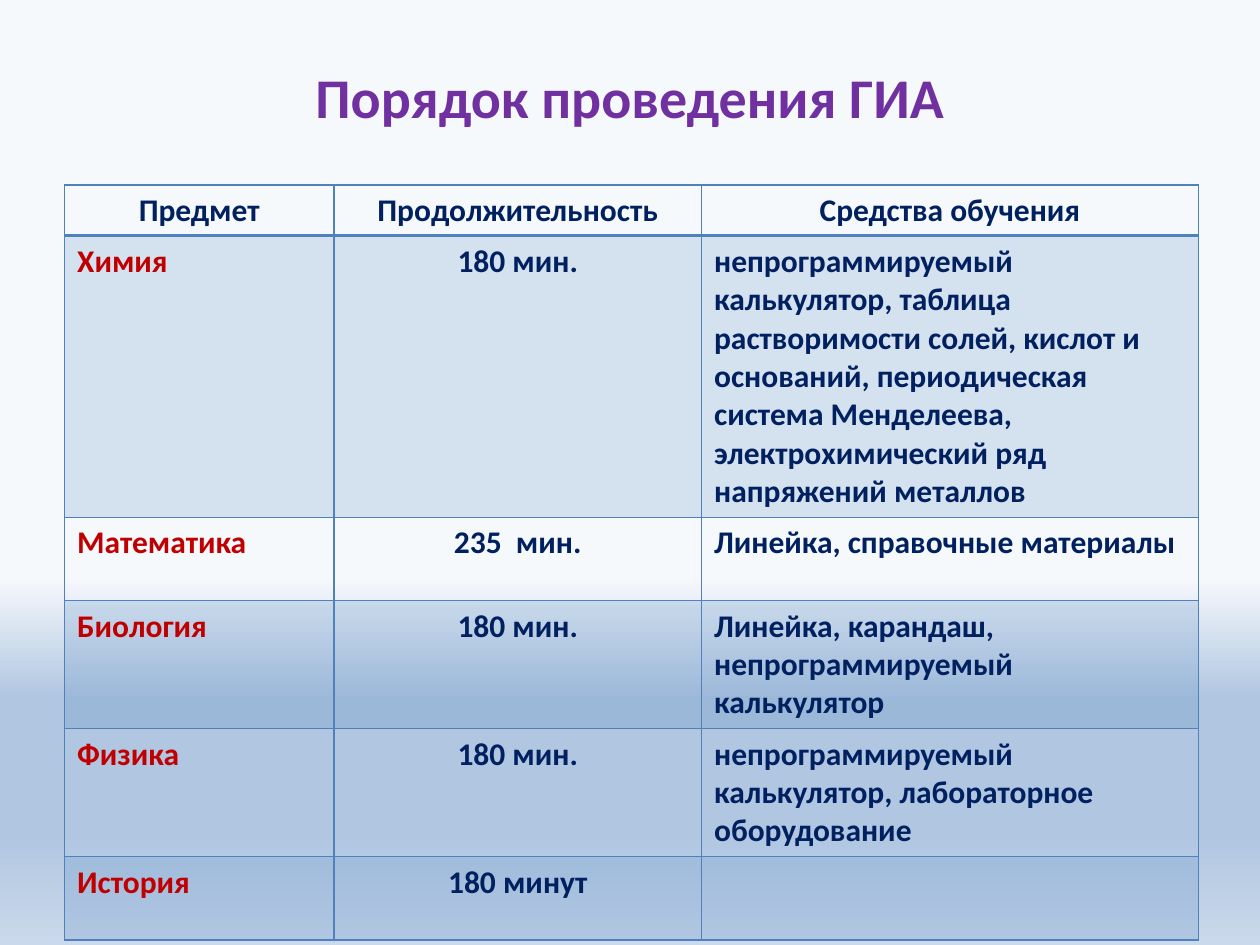
from lxml import etree
from pptx import Presentation
from pptx import util as u
from pptx.dml.color import RGBColor
from pptx.enum import text
from pptx.oxml import parse_xml
from pptx.oxml.ns import nsdecls, qn

TITLE = "Порядок проведения ГИА"
HEADER = ("Предмет", "Продолжительность", "Средства обучения")
EXAMS = [
    ("Химия", "180 мин.",
     "непрограммируемый калькулятор, таблица растворимости солей, кислот и "
     "оснований, периодическая система Менделеева, электрохимический ряд "
     "напряжений металлов"),
    ("Математика", "235  мин.", "Линейка, справочные материалы"),
    ("Биология", "180 мин.", "Линейка, карандаш, непрограммируемый калькулятор"),
    ("Физика", "180 мин.",
     "непрограммируемый калькулятор, лабораторное оборудование"),
    ("История", "180 минут", ""),
]
COL_WIDTHS = (154, 210, 284)
ROW_HEIGHTS = (29, 160.5, 47.5, 73, 73, 47.5)
TITLE_BOX = (36, 21.6, 648, 67)
TABLE_POS = (36.9, 105.6)
THEME = {
    "font": "Calibri", "title_size": 32, "cell_size": 18,
    "title": "7030A0", "text": "002060", "subject": "C00000",
    "accent": "4F81BD", "band_alpha": 20, "line": 1, "header_line": 2,
    "background": [(61, "F6F9FC"), (74, "B0C6E1"), (88, "B0C6E1"), (100, "CAD9EB")],
}


def style(p, size, color, align):
    p.alignment = align
    for f in [p.font] + [r.font for r in p.runs]:
        f.name, f.size, f.bold = THEME["font"], u.Pt(size), True
        f.color.rgb = RGBColor.from_string(color)


def paint_background(s):
    fill = s.background.fill
    fill.gradient()
    grad = s.background._cSld.find(".//" + qn("a:gradFill"))
    for child in list(grad):
        grad.remove(child)
    stops = "".join(
        f'<a:gs pos="{pos * 1000}"><a:srgbClr val="{color}"/></a:gs>'
        for pos, color in THEME["background"])
    grad.append(parse_xml(f'<a:gsLst {nsdecls("a")}>{stops}</a:gsLst>'))
    grad.append(parse_xml(f'<a:lin {nsdecls("a")} ang="5400000" scaled="0"/>'))


def set_borders(cell, top, bottom):
    widths = {"lnL": THEME["line"], "lnR": THEME["line"], "lnT": top, "lnB": bottom}
    tc_pr = cell._tc.get_or_add_tcPr()
    for i, (side, width) in enumerate(widths.items()):
        tc_pr.insert(i, parse_xml(
            f'<a:{side} {nsdecls("a")} w="{u.Pt(width)}"><a:solidFill>'
            f'<a:srgbClr val="{THEME["accent"]}"/></a:solidFill></a:{side}>'))


def set_band(cell, banded):
    if not banded:
        cell.fill.background()
        return
    cell.fill.solid()
    cell.fill.fore_color.rgb = RGBColor.from_string(THEME["accent"])
    color = cell._tc.tcPr.find(".//" + qn("a:srgbClr"))
    etree.SubElement(color, qn("a:alpha"), val=str(THEME["band_alpha"] * 1000))


def add_title(s):
    sp = s.shapes.title
    sp.left, sp.top, sp.width, sp.height = map(u.Pt, TITLE_BOX)
    tf = sp.text_frame
    tf.text = TITLE
    tf.vertical_anchor = text.MSO_ANCHOR.MIDDLE
    style(tf.paragraphs[0], THEME["title_size"], THEME["title"], text.PP_ALIGN.CENTER)


def add_exam_table(s):
    rows = [HEADER] + EXAMS
    size = sum(COL_WIDTHS), sum(ROW_HEIGHTS)
    table = s.shapes.add_table(
        len(rows), len(HEADER), *map(u.Pt, TABLE_POS + size)).table
    table.first_row = table.horz_banding = False
    for column, width in zip(table.columns, COL_WIDTHS):
        column.width = u.Pt(width)
    for row, height in zip(table.rows, ROW_HEIGHTS):
        row.height = u.Pt(height)
    for i, values in enumerate(rows):
        for j, value in enumerate(values):
            cell = table.cell(i, j)
            cell.text_frame.text = value
            centred = i == 0 or j == 1
            style(cell.text_frame.paragraphs[0], THEME["cell_size"],
                  THEME["subject" if i and j == 0 else "text"],
                  text.PP_ALIGN.CENTER if centred else text.PP_ALIGN.LEFT)
            set_band(cell, i % 2 == 1)
            set_borders(cell, THEME["header_line" if i == 1 else "line"],
                        THEME["header_line" if i == 0 else "line"])


def main():
    prs = Presentation()
    prs.slide_width, prs.slide_height = u.Pt(720), u.Pt(540)
    s = prs.slides.add_slide(prs.slide_layouts[5])
    paint_background(s)
    add_title(s)
    add_exam_table(s)
    prs.save("out.pptx")


if __name__ == "__main__":
    main()
